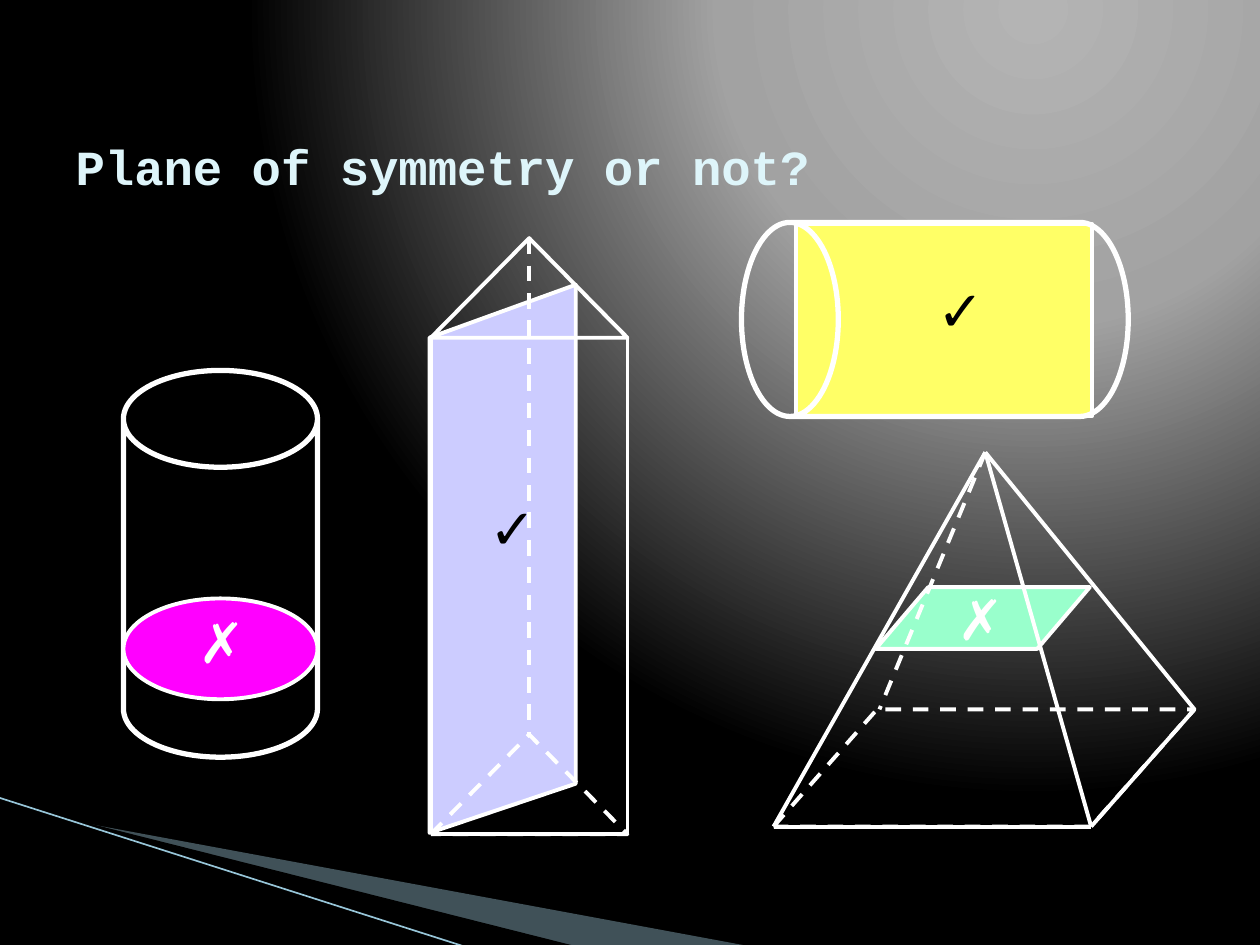
from pptx import Presentation
from pptx.dml.color import RGBColor
from pptx.enum.dml import MSO_LINE
from pptx.enum.shapes import MSO_CONNECTOR, MSO_SHAPE
from pptx.enum.text import MSO_ANCHOR, MSO_AUTO_SIZE, PP_ALIGN
from pptx.oxml import parse_xml
from pptx.oxml.ns import nsdecls
from pptx.util import Inches, Pt
from lxml import etree

COLORS = {
    "white": "FFFFFF", "black": "000000", "title": "DEF5FA",
    "wedge": "A0CBDC", "sweep": "97C5D8",
    "mint": "99FFCC", "yellow": "FFFF66", "magenta": "FF00FF", "lilac": "CCCCFF",
}
A = "{http://schemas.openxmlformats.org/drawingml/2006/main}"

prs = Presentation()
prs.slide_width, prs.slide_height = Inches(10), Inches(7.5)
slide = prs.slides.add_slide(prs.slide_layouts[5])
shapes = slide.shapes
COLUMN = prs.slide_width / 100  # square grid: 100 columns by 75 rows


def grid(*cells):
    return [round(cell * COLUMN) for cell in cells]


def paint(item, fill=None, line="white", width=2.25, dashed=False):
    """Style a shape or connector; None leaves its fill or line empty."""
    if hasattr(item, "fill"):
        item.shadow.inherit = False
        if fill:
            item.fill.solid()
            item.fill.fore_color.rgb = RGBColor.from_string(COLORS[fill])
        else:
            item.fill.background()
    else:
        etree.SubElement(item.element.spPr, A + "effectLst")
    if line:
        item.line.color.rgb = RGBColor.from_string(COLORS[line])
        item.line.width = Pt(width)
        if dashed:
            item.line.dash_style = MSO_LINE.DASH
    else:
        item.line.fill.background()


# Background glow from the upper right
stops = "".join(
    f'<a:gs pos="{share * 1000}"><a:srgbClr val="{color}"/></a:gs>'
    for share, color in [(0, "B4B4B4"), (40, "A2A2A2"), (100, "000000")])
slide.element.cSld.insert(0, parse_xml(
    f'<p:bg {nsdecls("p", "a")}><p:bgPr><a:gradFill rotWithShape="1">'
    f'<a:gsLst>{stops}</a:gsLst><a:path path="circle">'
    '<a:fillToRect l="65000" t="0" r="0" b="98000"/></a:path></a:gradFill>'
    '<a:effectLst/></p:bgPr></p:bg>'))

# Title
title = shapes.title
title.left, title.top, title.width, title.height = grid(5, 6.9, 90, 12.5)
title.text_frame.text = "Plane of symmetry or not?"
title.text_frame.vertical_anchor = MSO_ANCHOR.MIDDLE
heading = title.text_frame.paragraphs[0]
heading.alignment = PP_ALIGN.LEFT
heading.runs[0].font.name = "Courier New"
heading.runs[0].font.size = Pt(28)
heading.runs[0].font.bold = True
heading.runs[0].font.color.rgb = RGBColor.from_string(COLORS["title"])

# Sweeps in the lower left corner
for fill, corners in [
    ("wedge", [(5.5, 65.1), (59.5, 75.1), (45.6, 75.1), (5.5, 65)]),
    ("black", [(5.3, 64.9), (45.7, 75.1), (37.2, 75.2), (5.4, 65)]),
]:
    start, *others = [grid(*corner) for corner in corners]
    builder = shapes.build_freeform(*start, scale=1.0)
    builder.add_line_segments(others)
    sweep = builder.convert_to_shape()
    paint(sweep, fill, line=None)
    if fill == "wedge":
        tint = sweep.element.spPr.find(f"{A}solidFill/{A}srgbClr")
        etree.SubElement(tint, A + "alpha", val="40000")
edge = shapes.add_connector(MSO_CONNECTOR.STRAIGHT, *grid(-0.1, 63.3, 37.1, 75.2))
paint(edge, line="sweep", width=0.95)

# Slices and cylinders: preset, box, adjustment, fill, line width, rotation
for preset, box, adjustment, fill, width, rotation in [
    (MSO_SHAPE.PARALLELOGRAM, (69.5, 46.6, 17, 4.9), 0.852, "mint", 2.25, 0),
    (MSO_SHAPE.RECTANGLE, (63.2, 17.8, 23.5, 15.2), None, "yellow", 2.25, 0),
    (MSO_SHAPE.CAN, (9.8, 29.4, 15.4, 30.7), 0.499, None, 3, 0),
    (MSO_SHAPE.CAN, (66.5, 10, 15.4, 30.7), 0.499, None, 3, 270),
    (MSO_SHAPE.OVAL, (9.8, 47.5, 15.4, 8), None, "magenta", 2.25, 0),
]:
    solid = shapes.add_shape(preset, *grid(*box))
    if adjustment:
        solid.adjustments[0] = adjustment
    solid.rotation = rotation
    paint(solid, fill, width=width)

# Slice through the prism
builder = shapes.build_freeform(*grid(34.1, 26.8), scale=1.0)
builder.add_line_segments(
    [grid(*corner) for corner in [(45.7, 22.6), (45.7, 62.2), (34.1, 66.1)]])
paint(builder.convert_to_shape(), "lilac")

# Triangular prism
left, middle, right = 34.2, 42, 49.8
apex, lid, floor = 18.9, 26.8, 66.2
depth = floor - lid
for drop, dashed in [(0, False), (depth, True)]:
    face = shapes.add_shape(MSO_SHAPE.ISOSCELES_TRIANGLE,
                            *grid(left, apex + drop, right - left, lid - apex))
    paint(face, dashed=dashed)
prism_edges = [
    ((left, lid), (left, floor), False),
    ((middle, apex), (middle, apex + depth), True),
    ((right, lid), (right, floor), False),
    ((left, floor), (right, floor), False),
]

# Pyramid
peak, front_left, front_right = (78.2, 35.9), (61.4, 65.6), (86.6, 65.6)
back_left, back_right = (69.8, 56.3), (94.8, 56.3)
base = shapes.add_shape(MSO_SHAPE.PARALLELOGRAM, *grid(
    front_left[0], back_right[1],
    back_right[0] - front_left[0], front_left[1] - back_right[1]))
base.adjustments[0] = 0.883
paint(base, dashed=True)
pyramid_edges = [
    (front_right, peak, False), (peak, back_right, False),
    (peak, back_left, True), (peak, front_left, False),
    (front_left, front_right, False), (front_right, back_right, False),
]

for begin, end, dashed in prism_edges + pyramid_edges:
    edge = shapes.add_connector(MSO_CONNECTOR.STRAIGHT, *grid(*begin, *end))
    paint(edge, dashed=dashed)

# Verdict on each slice
for verdict, x, y in [("✓", 37.9, 38.7), ("✓", 73.4, 21.4),
                      ("✗", 14.8, 47.7), ("✗", 75, 45.9)]:
    holds = verdict == "✓"
    mark = shapes.add_textbox(*grid(x, y, 5.5 if holds else 6, 6.3)).text_frame
    mark.word_wrap = not holds
    mark.auto_size = MSO_AUTO_SIZE.SHAPE_TO_FIT_TEXT
    mark.text = verdict
    font = mark.paragraphs[0].runs[0].font
    font.name = "Arial"
    font.size = Pt(32)
    font.bold = holds
    font.color.rgb = RGBColor.from_string(COLORS["black" if holds else "white"])

prs.save("out.pptx")
